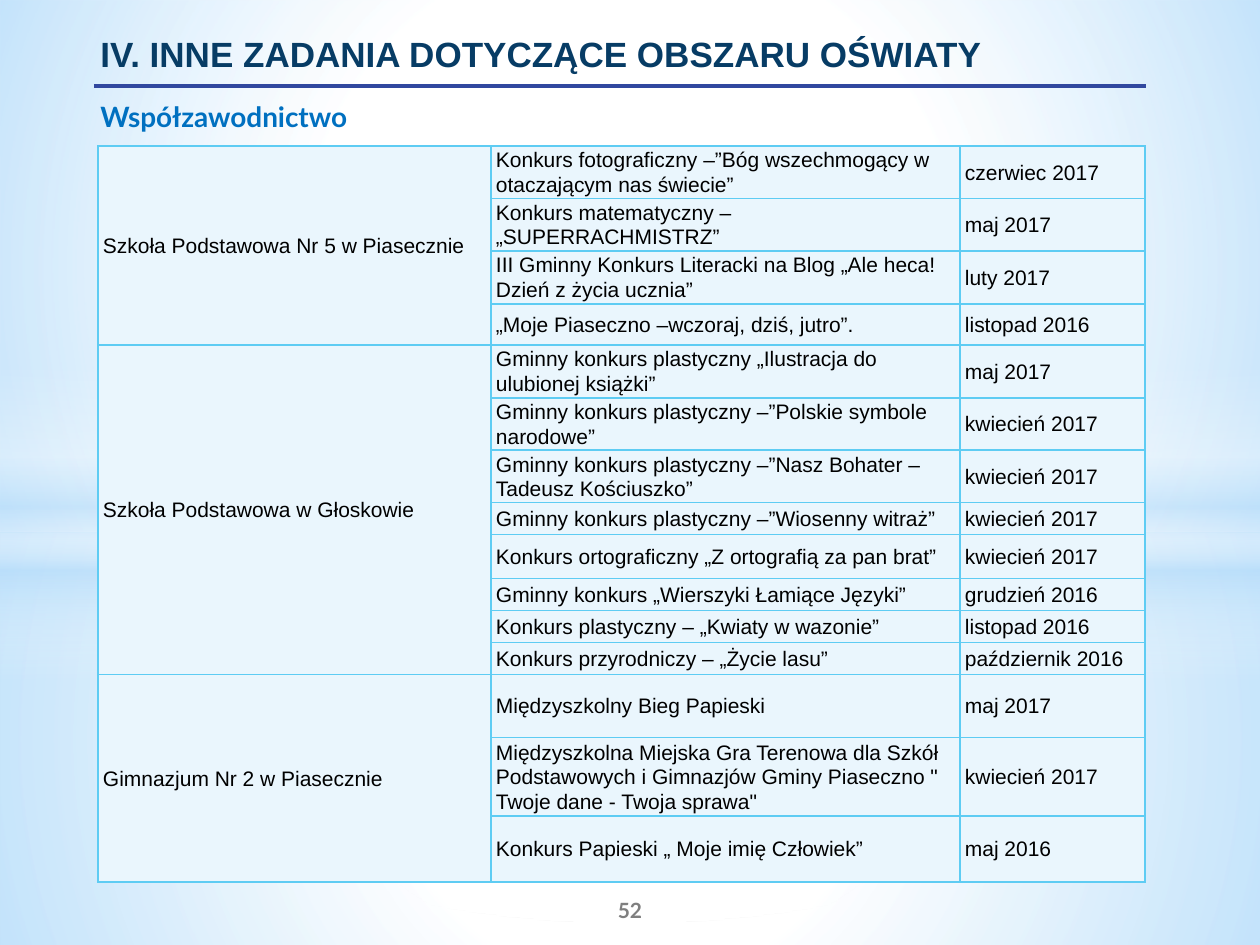
from lxml import etree
from pptx import Presentation, util as u
from pptx.dml.color import RGBColor
from pptx.enum import shapes, text
from pptx.oxml.ns import qn

PX = 914400 // 126
HEX = {"white": "FFFFFF", "sky": "B4DCFA", "navy": "073C65", "rule": "31489F",
       "blue": "0070C0", "gray": "7F7F7F", "black": "000000",
       "cell": "EAF6FD", "edge": "5ECCF3"}

deck = Presentation()
deck.slide_width, deck.slide_height = u.Inches(10), u.Inches(7.5)
slide = deck.slides.add_slide(deck.slide_layouts[6])


def write(frame, words, size=12, font="Arial", color="black", bold=False,
          align=text.PP_ALIGN.LEFT, space=None):
    frame.word_wrap = True
    para = frame.paragraphs[0]
    para.alignment = align
    para.line_spacing = space
    run = para.add_run()
    run.text = words
    run.font.size, run.font.name, run.font.bold = u.Pt(size), font, bold
    run.font.color.rgb = RGBColor.from_string(HEX[color])


def node(parent, tag, **attrs):
    return etree.SubElement(parent, qn("a:" + tag), attrs)


# Background glow: kind, box, angle (None = radial), stops of (place, colour, alpha)
rect, oval = shapes.MSO_SHAPE.RECTANGLE, shapes.MSO_SHAPE.OVAL
glows = [
    (rect, (0, 533, 1260, 412), None,
     [(0, "white", 91), (37, "white", 76), (100, "sky", 79)]),
    (rect, (0, 0, 1260, 533), None,
     [(0, "white", 89), (48, "white", 62), (100, "sky", 79)]),
    (rect, (0, 365, 1260, 315), 90,
     [(0, "white", 0), (29, "white", 30), (45, "sky", 40),
      (55, "white", 26), (65, "sky", 60), (100, "white", 0)]),
    (oval, (0, 220, 1260, 703), None, [(0, "white", 100), (54, "white", 0)]),
]
for kind, box, angle, stops in glows:
    glow = slide.shapes.add_shape(kind, *(n * PX for n in box))
    glow.shadow.inherit = False
    glow.line.fill.background()
    grad = etree.Element(qn("a:gradFill"), rotWithShape="1")
    steps = node(grad, "gsLst")
    for place, color, alpha in stops:
        stop = node(steps, "gs", pos=str(place * 1000))
        tint = node(stop, "srgbClr", val=HEX[color])
        node(tint, "alpha", val=str(alpha * 1000))
    if angle is None:
        ring = node(grad, "path", path="circle")
        node(ring, "fillToRect", l="50000", t="50000", r="50000", b="50000")
    else:
        node(grad, "lin", ang=str(angle * 60000), scaled="0")
    glow.element.spPr.insert(2, grad)

# Page number, title and subtitle
labels = [
    ((504, 885, 252, 50), "52", dict(font="Lato", color="gray", bold=True,
                                     align=text.PP_ALIGN.CENTER)),
    ((88, 26, 1109, 110), "IV. INNE ZADANIA DOTYCZĄCE OBSZARU OŚWIATY",
     dict(size=20, color="navy", bold=True)),
    ((88, 93, 1085, 47), "Współzawodnictwo",
     dict(size=16, font="Lato", color="blue", bold=True)),
]
for box, words, style in labels:
    label = slide.shapes.add_textbox(*(n * PX for n in box))
    write(label.text_frame, words, **style)
    if words == "52":
        label.text_frame.vertical_anchor = text.MSO_ANCHOR.MIDDLE

# Rule under the title
rule = slide.shapes.add_connector(shapes.MSO_CONNECTOR.STRAIGHT,
                                  94 * PX, 86 * PX, 1146 * PX, 86 * PX)
rule.line.color.rgb = RGBColor.from_string(HEX["rule"])
rule.line.width = u.Pt(2.25)
node(rule.element.spPr, "effectLst")

# Contests by school: row height, contest, date
schools = [
    ("Szkoła Podstawowa Nr 5 w Piasecznie", [
        (52, "Konkurs fotograficzny –”Bóg wszechmogący w otaczającym nas świecie”", "czerwiec 2017"),
        (52, "Konkurs matematyczny – „SUPERRACHMISTRZ”", "maj 2017"),
        (53, "III Gminny Konkurs Literacki na Blog „Ale heca! Dzień z życia ucznia”", "luty 2017"),
        (41, "„Moje Piaseczno –wczoraj, dziś, jutro”.", "listopad 2016")]),
    ("Szkoła Podstawowa w Głoskowie", [
        (53, "Gminny konkurs plastyczny „Ilustracja do ulubionej książki”", "maj 2017"),
        (52, "Gminny konkurs plastyczny –”Polskie symbole narodowe”", "kwiecień 2017"),
        (52, "Gminny konkurs plastyczny –”Nasz Bohater – Tadeusz Kościuszko”", "kwiecień 2017"),
        (32, "Gminny konkurs plastyczny –”Wiosenny witraż”", "kwiecień 2017"),
        (44, "Konkurs ortograficzny „Z ortografią za pan brat”", "kwiecień 2017"),
        (32, "Gminny konkurs „Wierszyki Łamiące Języki”", "grudzień 2016"),
        (32, "Konkurs plastyczny – „Kwiaty w wazonie”", "listopad 2016"),
        (32, "Konkurs przyrodniczy – „Życie lasu”", "październik 2016")]),
    ("Gimnazjum Nr 2 w Piasecznie", [
        (63, "Międzyszkolny Bieg Papieski", "maj 2017"),
        (78, "Międzyszkolna Miejska Gra Terenowa dla Szkół Podstawowych i Gimnazjów "
             "Gminy Piaseczno \" Twoje dane - Twoja sprawa\"", "kwiecień 2017"),
        (66, "Konkurs Papieski „ Moje imię Człowiek”", "maj 2016")]),
]
count = sum(len(events) for _, events in schools)
high = sum(event[0] for _, events in schools for event in events)
grid = slide.shapes.add_table(count, 3, 98 * PX, 146 * PX, 1047 * PX, high * PX).table
grid.first_row = grid.horz_banding = False
for col, wide in zip(grid.columns, (393, 469, 185)):
    col.width = wide * PX

# Cell fill, margins and borders
for cell in grid.iter_cells():
    cell.fill.solid()
    cell.fill.fore_color.rgb = RGBColor.from_string(HEX["cell"])
    cell.margin_left = cell.margin_right = 5 * PX
    cell.margin_top = cell.margin_bottom = 0
    cell.vertical_anchor = text.MSO_ANCHOR.MIDDLE
    props = cell._tc.get_or_add_tcPr()
    for spot, side in enumerate(("lnL", "lnR", "lnT", "lnB")):
        edge = etree.Element(qn("a:" + side), w=str(u.Pt(1)))
        node(node(edge, "solidFill"), "srgbClr", val=HEX["edge"])
        props.insert(spot, edge)

# Cell text
row = 0
for school, events in schools:
    first = grid.cell(row, 0)
    first.merge(grid.cell(row + len(events) - 1, 0))
    write(first.text_frame, school, space=1.04)
    for tall, event, date in events:
        grid.rows[row].height = tall * PX
        write(grid.cell(row, 1).text_frame, event, space=1.04)
        write(grid.cell(row, 2).text_frame, date, space=1.04)
        row += 1

deck.save("out.pptx")
